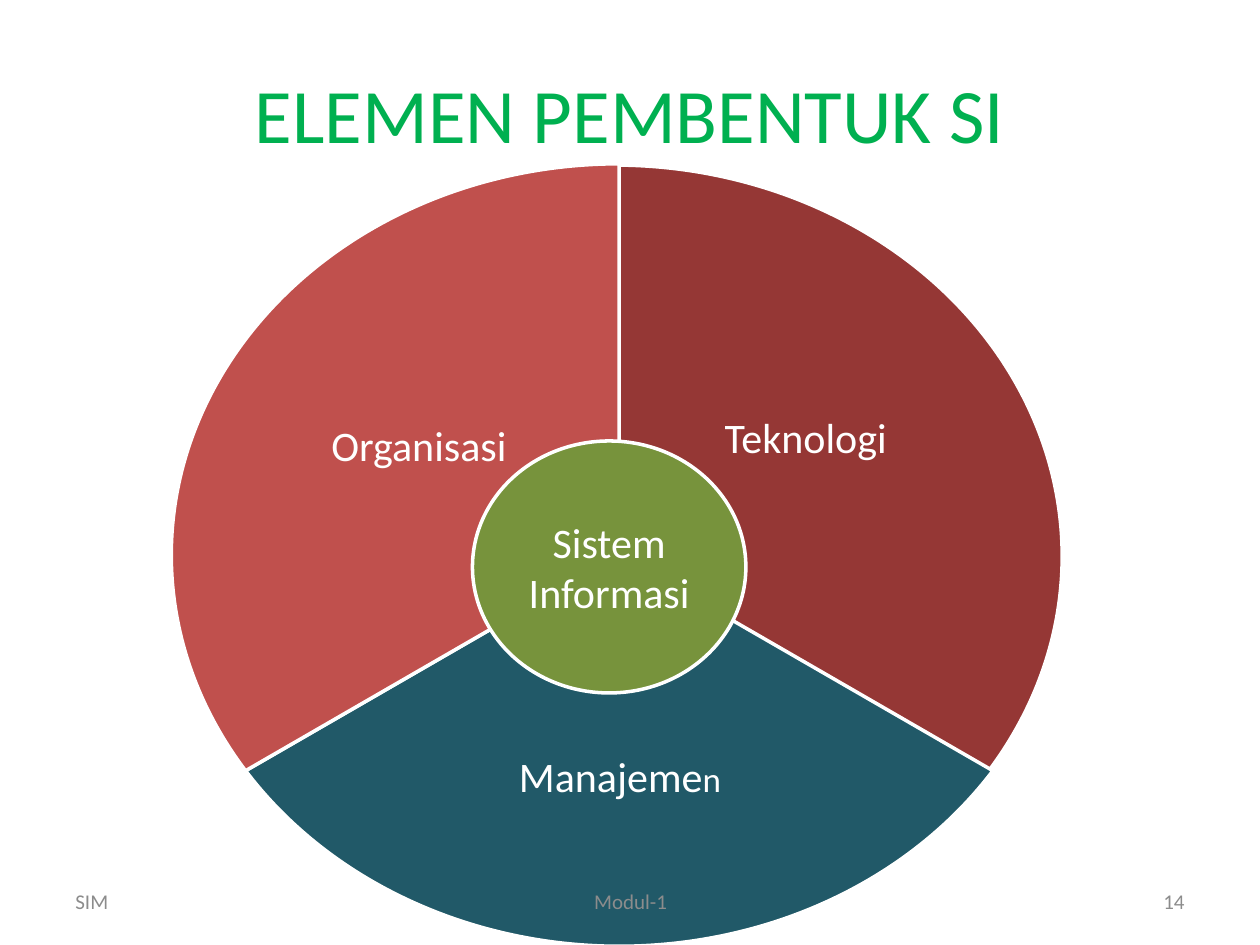
import pptx
import pptx.util
import pptx.dml.color
import pptx.enum.shapes
import pptx.enum.text

Inches = pptx.util.Inches
SHAPE = pptx.enum.shapes.MSO_SHAPE
ALIGN = pptx.enum.text.PP_ALIGN


def paint(target, color):
    target.rgb = pptx.dml.color.RGBColor.from_string(color)


def write(frame, runs, color, align=ALIGN.CENTER, inset=None, spacing=None):
    frame_format = {"word_wrap": True, "vertical_anchor": pptx.enum.text.MSO_ANCHOR.MIDDLE}
    if inset is not None:
        for side in ("left", "top", "right", "bottom"):
            frame_format[f"margin_{side}"] = Inches(inset)
    for attribute, value in frame_format.items():
        setattr(frame, attribute, value)
    paragraph = frame.paragraphs[0]
    for attribute, value in {"alignment": align, "line_spacing": spacing}.items():
        setattr(paragraph, attribute, value)
    for words, size in runs:
        run = paragraph.add_run()
        run.text = words
        for attribute, value in {"name": "Calibri", "size": pptx.util.Pt(size)}.items():
            setattr(run.font, attribute, value)
        paint(run.font.color, color)


deck = pptx.Presentation()
for attribute, value in {"slide_width": Inches(10), "slide_height": Inches(7.5)}.items():
    setattr(deck, attribute, value)
slide = deck.slides.add_slide(deck.slide_layouts[6])
shapes = slide.shapes

title = shapes.add_textbox(Inches(0.5), Inches(0.24), Inches(9), Inches(1.31))
write(title.text_frame, [("ELEMEN PEMBENTUK SI", 44)], "00B050")

sectors = []
elements = [
    ([("Teknologi", 24)], "953735", (1.32, 1.31), 270, (5.19, 2.46, 2.41, 2.07)),
    ([("Manajeme", 24), ("n", 20)], "215968", (1.36, 1.3), 30, (3.31, 5.22, 3.22, 1.92)),
    ([("Organisasi", 24)], "C0504D", (1.36, 1.3), 150, (2.12, 2.52, 2.41, 2.07)),
]
for runs, color, (left, top), start, label_box in elements:
    sector = shapes.add_shape(SHAPE.PIE, Inches(left), Inches(top), Inches(7.11), Inches(6.21))
    for index, angle in enumerate((start, (start + 120) % 360)):
        sector.adjustments[index] = angle * 0.6
    sectors.append((sector, color))
    label = shapes.add_textbox(*map(Inches, label_box))
    write(label.text_frame, runs, "FFFFFF", inset=0.03, spacing=0.9)

footers = [
    ("SIM", 0.5, 2.33, ALIGN.LEFT),
    ("Modul-1", 3.42, 3.17, ALIGN.CENTER),
    ("14", 7.17, 2.33, ALIGN.RIGHT),
]
for words, left, width, align in footers:
    footer = shapes.add_textbox(Inches(left), Inches(6.95), Inches(width), Inches(0.4))
    write(footer.text_frame, [(words, 12)], "8C8C8C", align)

core = shapes.add_shape(SHAPE.OVAL, Inches(3.75), Inches(3.5), Inches(2.17), Inches(2))
write(core.text_frame, [("Sistem Informasi", 24)], "FFFFFF")

for part, color in sectors + [(core, "77933C")]:
    part.shadow.inherit = False
    part.fill.solid()
    paint(part.fill.fore_color, color)
    paint(part.line.color, "FFFFFF")
    part.line.width = pptx.util.Pt(2)

deck.save("out.pptx")
